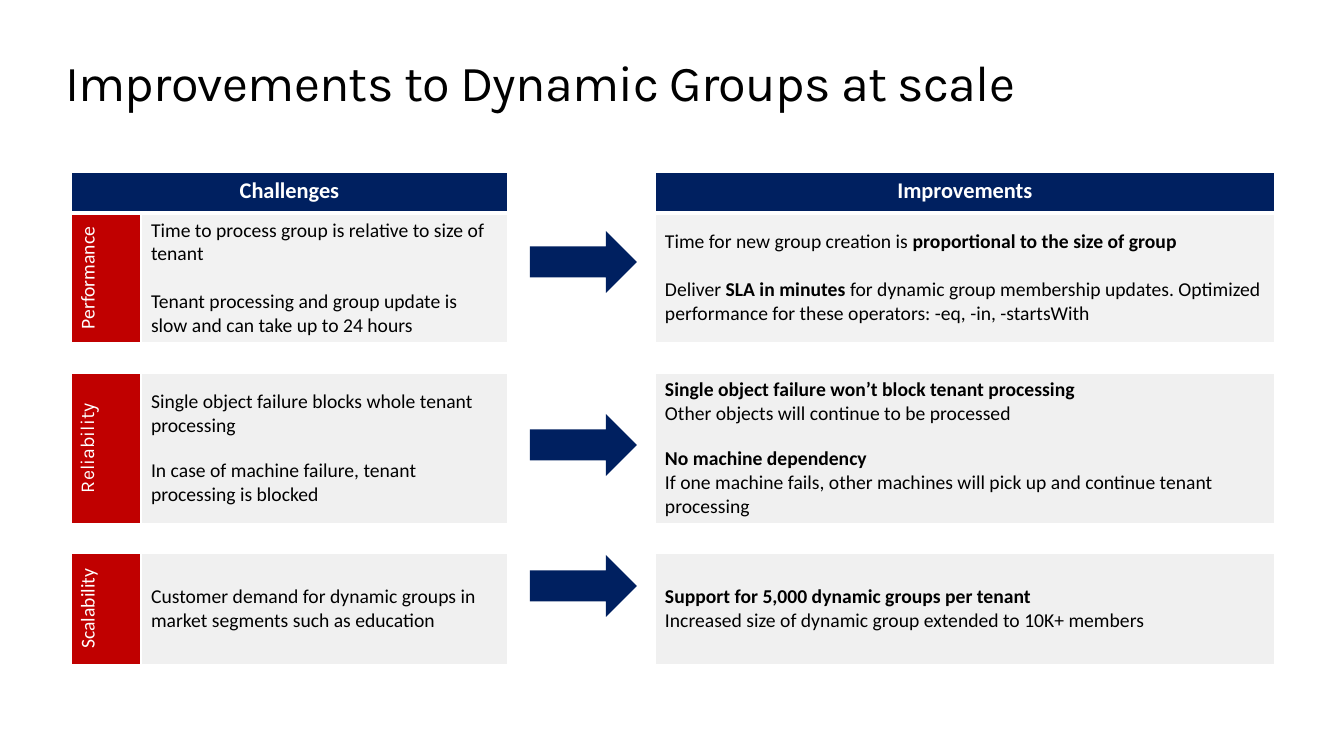
from lxml.etree import SubElement
from pptx import Presentation
from pptx.dml.color import RGBColor
from pptx.enum.shapes import MSO_SHAPE
from pptx.enum.text import MSO_ANCHOR, PP_ALIGN
from pptx.oxml.ns import qn
from pptx.util import Emu, Pt

EMU_PER_PX = 914400 / 100.8
COLORS = {"white": "FFFFFF", "black": "000000", "navy": "002060",
          "red": "C00000", "light": "F2F2F2", "gray": "F0F0F0"}
COLUMN_WIDTHS = [70, 367, 147, 620]
ROW_HEIGHTS = [41, 66, 64, 30, 56, 94, 30, 111]
BREAK = "\n"

# Each paragraph is a list of (text, bold) spans; gap is the space between paragraphs
SECTIONS = [
    {"row": 1, "rows": 2, "label": "Performance", "font": "Calibri",
     "fill": "light", "gap": 17, "arrow_drop": 18,
     "challenges": [
         [("Time to process group is relative to size of tenant", False)],
         [("Tenant processing and group update is slow and can take up to 24 hours", False)]],
     "improvements": [
         [("Time for new group creation is ", False),
          ("proportional to the size of group", True)],
         [("Deliver ", False), ("SLA in minutes ", True),
          ("for dynamic group membership updates. Optimized performance "
           "for these operators: -eq, -in, -startsWith", False)]]},
    {"row": 4, "rows": 2, "label": "Reliability", "font": "Karla",
     "fill": "gray", "gap": 15, "arrow_drop": 41,
     "challenges": [
         [("Single object failure blocks whole tenant processing", False)],
         [("In case of machine failure, tenant processing is blocked", False)]],
     "improvements": [
         [("Single object failure won’t block tenant processing", True), (BREAK, True),
          ("Other objects will continue to be processed", False)],
         [("No machine dependency", True), (BREAK, True),
          ("If one machine fails, other machines will pick up and "
           "continue tenant processing", False)]]},
    {"row": 7, "rows": 1, "label": "Scalability", "font": "Calibri",
     "fill": "gray", "gap": 0, "arrow_drop": 2,
     "challenges": [
         [("Customer demand for dynamic groups in market segments such as education", False)]],
     "improvements": [
         [("Support for 5,000 dynamic groups per tenant", True), (BREAK, True),
          ("Increased size of dynamic group extended to 10K+ members", False)]]},
]


def px(length):
    return Emu(round(length * EMU_PER_PX))


def color(name):
    return RGBColor.from_string(COLORS[name])


def paint(target, name):
    target.fill.solid()
    target.fill.fore_color.rgb = color(name)


def format_font(font, ink, **values):
    for name, value in values.items():
        setattr(font, name, value)
    font.color.rgb = color(ink)


def border_cell(cell, **widths):
    properties = cell._tc.get_or_add_tcPr()
    for side in "LRTB":
        line = SubElement(properties, qn(f"a:ln{side}"), w=str(Pt(widths.get(side, 1))))
        fill = SubElement(line, qn("a:solidFill"))
        SubElement(fill, qn("a:srgbClr"), val=COLORS["white"])


def write_cell(cell, paragraphs, fill, ink="black", size=14, font="Calibri",
               align=PP_ALIGN.LEFT, anchor=MSO_ANCHOR.MIDDLE, gap=0):
    paint(cell, fill)
    cell.vertical_anchor = anchor
    frame = cell.text_frame
    for index, spans in enumerate(paragraphs):
        para = frame.add_paragraph() if index else frame.paragraphs[0]
        para.alignment = align
        if index:
            para.space_before = Pt(gap)
        for text, bold in spans:
            if text == BREAK:
                para.add_line_break()
                SubElement(para._p[-1], qn("a:rPr"), sz=str(size * 100))
                continue
            span = para.add_run()
            span.text = text
            format_font(span.font, ink, name=font, size=Pt(size), bold=bold)


def draw_title(page, left, top, width, height):
    title = page.shapes.title
    title.left, title.top, title.width, title.height = map(px, (left, top, width, height))
    frame = title.text_frame
    frame.margin_left = frame.margin_right = frame.margin_top = frame.margin_bottom = 0
    frame.word_wrap = True
    frame.vertical_anchor = MSO_ANCHOR.MIDDLE
    para = frame.paragraphs[0]
    para.alignment = PP_ALIGN.LEFT
    span = para.add_run()
    span.text = "Improvements to Dynamic Groups at scale"
    format_font(span.font, "black", name="Karla", size=Pt(36), bold=False)
    span.font._element.set("spc", "-50")


def fill_section(table, section):
    row, last = section["row"], section["row"] + section["rows"] - 1
    if last > row:
        for column in (0, 1, 3):
            table.cell(row, column).merge(table.cell(last, column))
    label = table.cell(row, 0)
    write_cell(label, [[(section["label"], False)]], "red", ink="white",
               font=section["font"], align=PP_ALIGN.CENTER)
    label._tc.get_or_add_tcPr().set("vert", "vert270")
    for column, key in ((1, "challenges"), (3, "improvements")):
        write_cell(table.cell(row, column), section[key], section["fill"], gap=section["gap"])


def draw_table(page, left, top):
    frame = page.shapes.add_table(
        len(ROW_HEIGHTS), len(COLUMN_WIDTHS), px(left), px(top),
        px(sum(COLUMN_WIDTHS)), px(sum(ROW_HEIGHTS)))
    table = frame.table
    table.first_row = table.horz_banding = False
    for column, width in zip(table.columns, COLUMN_WIDTHS):
        column.width = px(width)
    for row, height in zip(table.rows, ROW_HEIGHTS):
        row.height = px(height)

    # White rules, heavier below the header
    for index, row in enumerate(table.rows):
        for cell in row.cells:
            border_cell(cell, T=3 if index == 1 else 1, B=1 if index else 3)
            paint(cell, "white")

    # Header
    table.cell(0, 0).merge(table.cell(0, 1))
    for column, heading in ((0, "Challenges"), (3, "Improvements")):
        write_cell(table.cell(0, column), [[(heading, True)]], "navy", ink="white",
                   size=16, align=PP_ALIGN.CENTER, anchor=MSO_ANCHOR.TOP)

    for section in SECTIONS:
        fill_section(table, section)

    # Small type in empty cells keeps the gap rows low
    for cell in table.iter_cells():
        if not cell.text_frame.text:
            SubElement(cell.text_frame.paragraphs[0]._p, qn("a:endParaRPr"), sz="1000")


def draw_arrows(page, left, top):
    arrow_left = left + sum(COLUMN_WIDTHS[:2]) + 22
    for section in SECTIONS:
        arrow_top = top + sum(ROW_HEIGHTS[:section["row"]]) + section["arrow_drop"]
        arrow = page.shapes.add_shape(
            MSO_SHAPE.RIGHT_ARROW, px(arrow_left), px(arrow_top), px(107), px(62))
        arrow.shadow.inherit = False
        paint(arrow, "navy")
        arrow.line.fill.background()


def main():
    deck = Presentation()
    deck.slide_width, deck.slide_height = px(1344), px(756)
    page = deck.slides.add_slide(deck.slide_layouts[5])
    draw_title(page, 65, 50, 1009, 62)
    draw_table(page, 71, 172)
    draw_arrows(page, 71, 172)
    deck.save("out.pptx")


if __name__ == "__main__":
    main()
